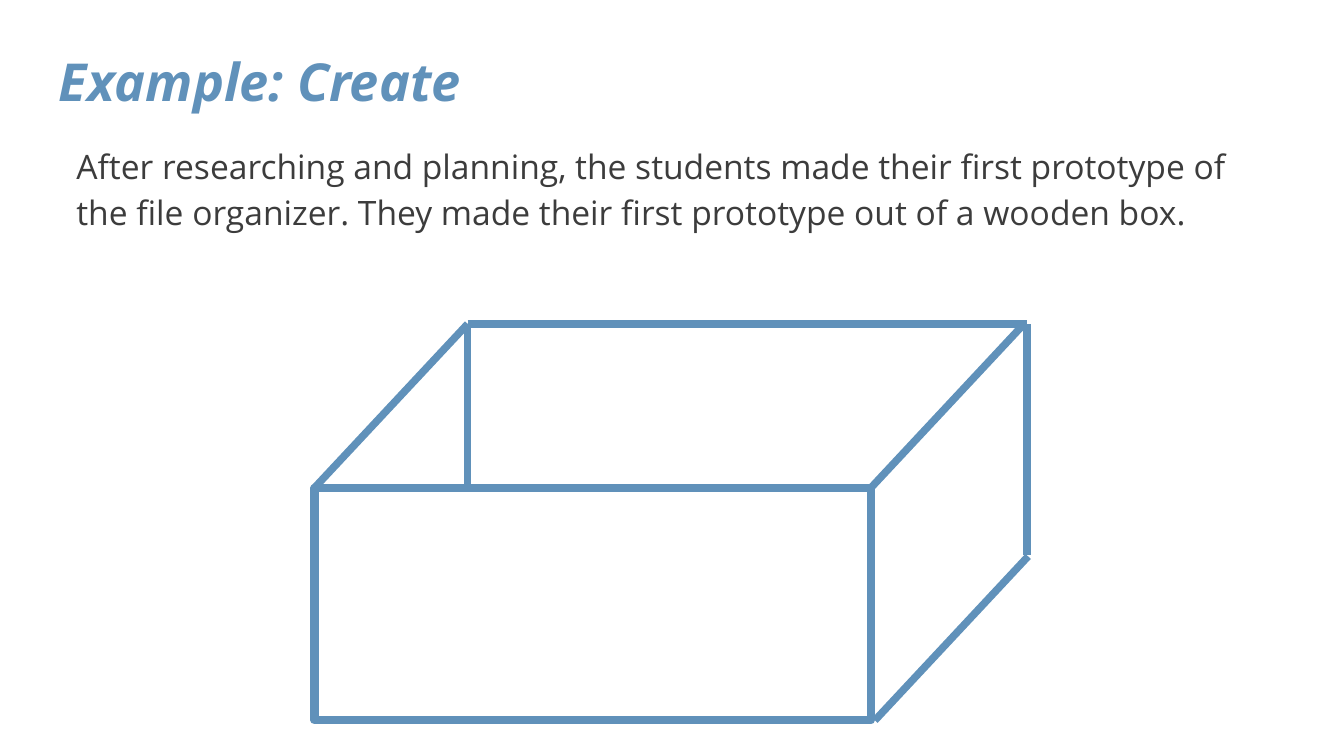
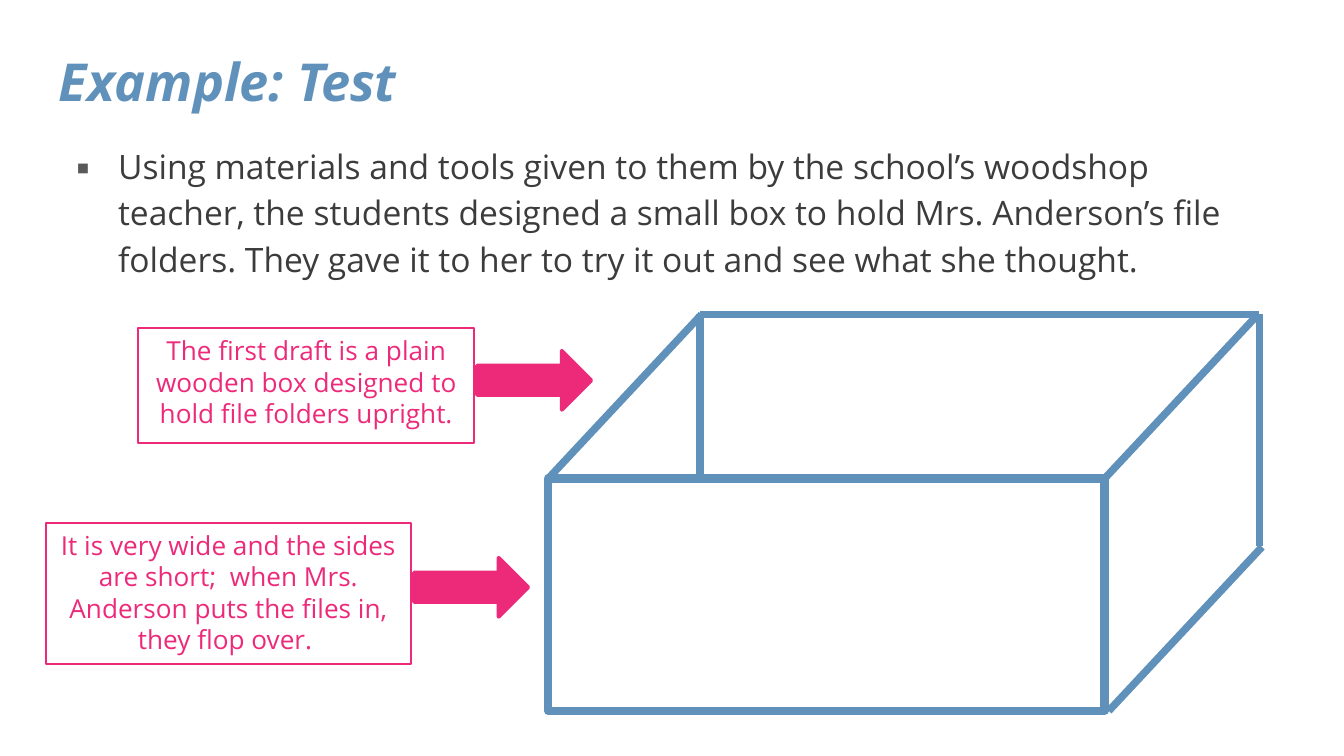
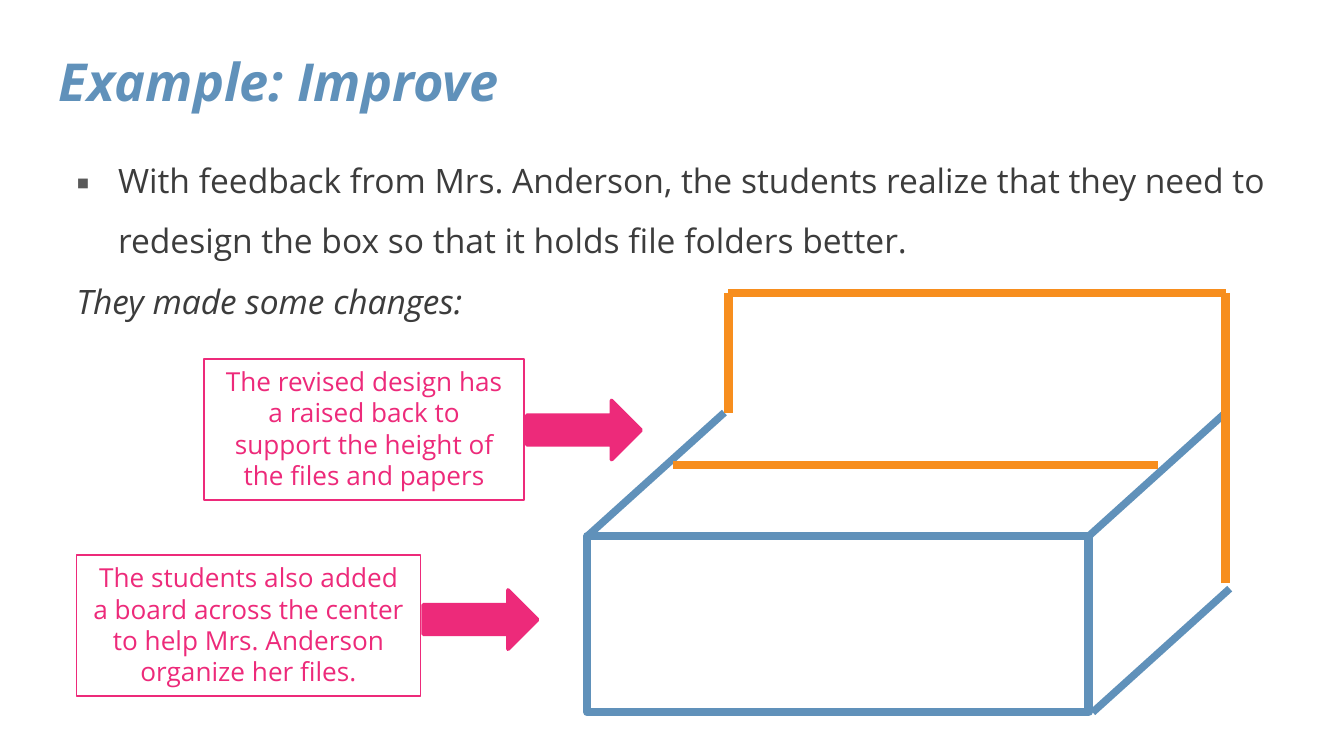
"""Build three slides on creating, testing and improving a file organizer."""
from lxml import etree
from pptx import Presentation
from pptx import util as u
from pptx.dml.color import RGBColor
from pptx.enum import shapes, text
from pptx.oxml import ns

BLUE = RGBColor(0x60, 0x91, 0xBA)
PINK = RGBColor(0xED, 0x2A, 0x7A)
ORANGE = RGBColor(0xF7, 0x8E, 0x1E)
INK = RGBColor(0x3C, 0x3C, 0x3C)
BULLET_GRAY = RGBColor(0x59, 0x59, 0x59)
FONT = "Open Sans"

TITLE_FORMAT = {"size": u.Pt(28), "bold": True, "italic": True, "color": BLUE}
BODY_FORMAT = {"size": u.Pt(18), "color": INK}
NOTE_FORMAT = {"size": u.Pt(14), "color": PINK}

SMALL_BOX = {"width": 4.14, "height": 1.73, "depth": (1.14, 1.22)}
WIDE_BOX = {"width": 3.73, "height": 1.31, "depth": (1.02, 0.92)}


def add_run(paragraph, words, values):
    """Add a run in the shared font with the given format values."""
    run = paragraph.add_run()
    run.text = words
    run.font.name = FONT
    for name, value in values.items():
        if name == "color":
            run.font.color.rgb = value
        else:
            setattr(run.font, name, value)


def add_text_frame(slide, top, height):
    """Add a wrapping text box with equal insets and return its frame."""
    box = slide.shapes.add_textbox(*map(u.Inches, (0.34, top, 9.3, height)))
    frame = box.text_frame
    frame.word_wrap = True
    frame.vertical_anchor = text.MSO_ANCHOR.TOP
    for side in ("left", "right", "top", "bottom"):
        setattr(frame, f"margin_{side}", u.Inches(0.1))
    return frame


def add_slide(presentation, title):
    """Add a blank slide with the shared title style."""
    slide = presentation.slides.add_slide(presentation.slide_layouts[6])
    frame = add_text_frame(slide, 0.27, 0.63)
    add_run(frame.paragraphs[0], title, TITLE_FORMAT)
    return slide


def indent(paragraph, bullet):
    """Indent a body paragraph, with a hanging square bullet if asked."""
    properties = paragraph._p.get_or_add_pPr()
    margin, first_line = (0.44, -0.31) if bullet else (0.13, 0)
    properties.set("marL", str(u.Inches(margin)))
    properties.set("indent", str(u.Inches(first_line)))
    if bullet:
        color = etree.SubElement(properties, ns.qn("a:buClr"))
        etree.SubElement(color, ns.qn("a:srgbClr"), val=str(BULLET_GRAY))
        etree.SubElement(properties, ns.qn("a:buSzPts"), val="1400")
        etree.SubElement(properties, ns.qn("a:buFont"), typeface=FONT)
        etree.SubElement(properties, ns.qn("a:buChar"), char="▪")


def add_body(slide, height, spacing, paragraphs):
    """Add body paragraphs given as (words, bullet, italic)."""
    frame = add_text_frame(slide, 0.94, height)
    for index, (words, bullet, italic) in enumerate(paragraphs):
        paragraph = frame.add_paragraph() if index else frame.paragraphs[0]
        paragraph.line_spacing = spacing
        indent(paragraph, bullet)
        add_run(paragraph, words, {**BODY_FORMAT, "italic": italic})


def add_shape(parent, kind, place, color, weight, filled=False):
    """Add an outlined preset shape with round corners and no shadow."""
    shape = parent.shapes.add_shape(kind, *map(u.Inches, place))
    shape.shadow.inherit = False
    if filled:
        shape.fill.solid()
        shape.fill.fore_color.rgb = color
    else:
        shape.fill.background()
    shape.line.color.rgb = color
    shape.line.width = u.Pt(weight)
    etree.SubElement(shape.line._get_or_add_ln(), ns.qn("a:round"))
    return shape


def add_edge(parent, start, end, color=BLUE, weight=4):
    """Add a straight edge between two points."""
    edge = parent.shapes.add_connector(
        shapes.MSO_CONNECTOR.STRAIGHT, *map(u.Inches, (*start, *end)))
    edge.line.color.rgb = color
    edge.line.width = u.Pt(weight)
    etree.SubElement(edge._element.spPr, ns.qn("a:effectLst"))


def add_box(slide, left, top, width, height, depth):
    """Draw the front and the slanted edges of a box as a group."""
    group = slide.shapes.add_group_shape()
    add_shape(group, shapes.MSO_SHAPE.RECTANGLE, (left, top, width, height), BLUE, 4.5)
    right = left + width
    for x, y in ((left, top), (right, top), (right + 0.03, top + height)):
        add_edge(group, (x, y), (x + depth[0], y - depth[1]))
    return group


def add_back(group, left, right, top, left_foot, right_foot, color=BLUE, weight=4):
    """Draw the back panel of a box: two uprights and a top edge."""
    for start, end in (
        ((left, left_foot), (left, top)),
        ((right, right_foot), (right, top)),
        ((left, top), (right, top)),
    ):
        add_edge(group, start, end, color, weight)


def add_callout(slide, place, arrow_top, words):
    """Add a framed note with an arrow leaving its right side."""
    note = add_shape(slide, shapes.MSO_SHAPE.RECTANGLE, place, PINK, 1)
    frame = note.text_frame
    frame.word_wrap = True
    frame.vertical_anchor = text.MSO_ANCHOR.TOP
    paragraph = frame.paragraphs[0]
    paragraph.alignment = text.PP_ALIGN.CENTER
    add_run(paragraph, words, NOTE_FORMAT)
    arrow_left = place[0] + place[2] + 0.02
    add_shape(slide, shapes.MSO_SHAPE.RIGHT_ARROW,
              (arrow_left, arrow_top, 0.85, 0.44), PINK, 2, filled=True)


def build_create(presentation):
    """Build the slide on the first prototype."""
    slide = add_slide(presentation, "Example: Create")
    add_body(slide, 1.35, 1.15, [(
        "After researching and planning, the students made their first prototype "
        "of the file organizer. They made their first prototype out of a wooden box.",
        False, False)])
    box = add_box(slide, 2.34, 3.63, **SMALL_BOX)
    add_back(box, 3.48, 7.64, 2.41, 3.62, 4.13)


def build_test(presentation):
    """Build the slide on trying out the prototype."""
    slide = add_slide(presentation, "Example: Test")
    add_body(slide, 1.24, 1.15, [(
        "Using materials and tools given to them by the school’s woodshop teacher, "
        "the students designed a small box to hold Mrs. Anderson’s file folders. "
        "They gave it to her to try it out and see what she thought.",
        True, False)])
    box = add_box(slide, 4.08, 3.56, **SMALL_BOX)
    add_back(box, 5.21, 9.37, 2.34, 3.56, 4.06)
    add_callout(slide, (1.03, 2.44, 2.5, 0.86), 2.61,
                "The first draft is a plain wooden box designed to hold file "
                "folders upright.")
    add_callout(slide, (0.34, 3.89, 2.72, 1.05), 4.15,
                "It is very wide and the sides are short;  when Mrs. Anderson "
                "puts the files in, they flop over. ")


def build_improve(presentation):
    """Build the slide on the revised design."""
    slide = add_slide(presentation, "Example: Improve")
    add_body(slide, 1.53, 1.5, [
        ("With feedback from Mrs. Anderson, the students realize that they need "
         "to redesign the box so that it holds file folders better.", True, False),
        ("They made some changes:", False, True),
    ])
    box = add_box(slide, 4.37, 3.99, **WIDE_BOX)
    add_back(box, 5.42, 9.12, 2.18, 3.07, 4.34, ORANGE, 4.5)
    add_edge(box, (5.01, 3.46), (8.62, 3.46), ORANGE, 4.5)
    add_callout(slide, (1.52, 2.67, 2.38, 1.05), 2.98,
                "The revised design has a raised back to support the height of "
                "the files and papers")
    add_callout(slide, (0.57, 4.13, 2.56, 1.05), 4.39,
                "The students also added a board across the center to help "
                "Mrs. Anderson organize her files.")


def main():
    """Build and save the presentation in a 16 by 9 format."""
    presentation = Presentation()
    presentation.slide_width = u.Inches(10)
    presentation.slide_height = u.Inches(10 * 9 / 16)
    build_create(presentation)
    build_test(presentation)
    build_improve(presentation)
    presentation.save("out.pptx")


if __name__ == "__main__":
    main()
